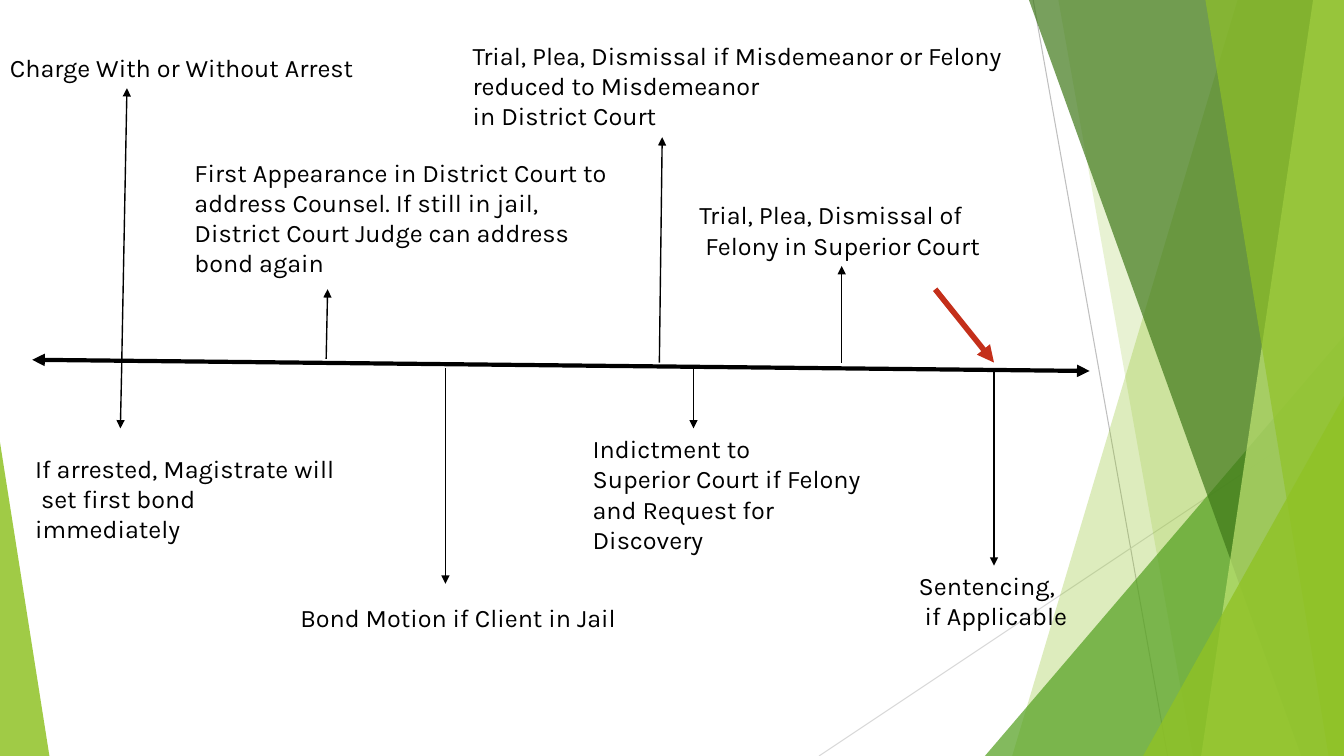
import pptx
import pptx.util
import pptx.dml.color
import pptx.enum.shapes
import pptx.oxml
import pptx.oxml.ns

Pt = pptx.util.Pt
RGB = pptx.dml.color.RGBColor
KIND = pptx.enum.shapes.MSO_SHAPE
LINK = pptx.enum.shapes.MSO_CONNECTOR

BLACK = RGB(0x00, 0x00, 0x00)
RED = RGB(0xC4, 0x2F, 0x1A)
GREY = RGB(0xBF, 0xBF, 0xBF)
PALE = RGB(0xD9, 0xD9, 0xD9)
LIME = RGB(0x90, 0xC2, 0x26)
LEAF = RGB(0x54, 0xA0, 0x21)
PINE = RGB(0x3F, 0x78, 0x19)
MINT = RGB(0xC0, 0xE4, 0x74)
WIDE, HIGH = 960, 540


def sub(parent, tag, **attrs):
    """Append a DrawingML element with the given attributes."""
    node = pptx.oxml.parse_xml(f"<a:{tag} {pptx.oxml.ns.nsdecls('a')}/>")
    for name, value in attrs.items():
        node.set(name, value)
    parent.append(node)


class Board:
    font = "Karla"
    size = 18

    def __init__(self, slide):
        self.shapes = slide.shapes

    def tint(self, shape, color, alpha):
        """Fill a shape with a colour at alpha percent opacity."""
        shape.shadow.inherit = False
        shape.line.fill.background()
        shape.fill.solid()
        shape.fill.fore_color.rgb = color
        fill = shape.fill._xPr.find(pptx.oxml.ns.qn("a:solidFill"))
        sub(fill[0], "alpha", val=str(alpha * 1000))

    def band(self, points, color, alpha):
        start, *rest = [(Pt(x), Pt(y)) for x, y in points]
        form = self.shapes.build_freeform(*start, scale=1.0)
        form.add_line_segments(rest, close=True)
        self.tint(form.convert_to_shape(), color, alpha)

    def wedge(self, left, top, width, apex, color, alpha):
        """Triangle standing on the slide's bottom edge."""
        shape = self.shapes.add_shape(KIND.ISOSCELES_TRIANGLE, Pt(left), Pt(top),
                                      Pt(width), Pt(HIGH - top))
        shape.adjustments[0] = apex
        self.tint(shape, color, alpha)

    def line(self, start, end, color=BLACK, width=1, head=False, tail=True, join=None):
        """Straight line; join is a (box, side) pair for its end."""
        link = self.shapes.add_connector(LINK.STRAIGHT, *map(Pt, start + end))
        link.line.color.rgb = color
        link.line.width = Pt(width)
        if join:
            link.end_connect(*join)
        for tag, shown in (("headEnd", head), ("tailEnd", tail)):
            if shown:
                sub(link.line._ln, tag, type="triangle")
        sub(link._element.spPr, "effectLst")

    def text(self, text, left, top, width, color=BLACK):
        rows = text.split("\n")
        box = self.shapes.add_textbox(Pt(left), Pt(top), Pt(width),
                                      Pt(7.4 + 21.8 * len(rows)))
        frame = box.text_frame
        frame.word_wrap = True
        for index, row in enumerate(rows):
            para = frame.add_paragraph() if index else frame.paragraphs[0]
            run = para.add_run()
            run.text = row
            run.font.name = self.font
            run.font.size = Pt(self.size)
            run.font.color.rgb = color
        return box


def decor(board):
    board.line((738, 0), (834, HIGH), color=GREY, width=0.75, tail=False)
    board.line((WIDE, 290), (585, HIGH), color=PALE, width=0.75, tail=False)

    def side(top, foot, color, alpha):
        """Band from the given top and foot to the right edge."""
        board.band([(top, 0), (WIDE, 0), (WIDE, HIGH), (foot, HIGH)], color, alpha)

    side(884, 723, LIME, 30)
    side(756, 852, LIME, 20)
    board.wedge(703.5, 240, 256.5, 1, LEAF, 72)
    side(735, 929.5, PINE, 70)
    side(938, 858, MINT, 70)
    side(861, 949, LIME, 65)
    board.wedge(816.5, 283, 143.5, 1, LIME, 80)
    board.wedge(0, 316, 35.3, 0, LIME, 85)


def course(board):
    """Timeline of a criminal case with its labels and arrows."""
    board.line((23, 257), (778.3, 265), width=3, head=True)
    board.text("Charge With or Without Arrest", 0, 33.8, 270)
    board.text("First Appearance in District Court to\naddress Counsel. If still in jail,\n"
               "District Court Judge can address\nbond again", 131.8, 108.5, 312)
    board.text("Bond Motion if Client in Jail", 207.4, 426.4, 246)
    board.text("If arrested, Magistrate will\n set first bond\nimmediately", 18, 320, 236)
    board.text("Trial, Plea, Dismissal if Misdemeanor or Felony\n"
               "reduced to Misdemeanor\nin District Court", 330.5, 25, 400)
    board.text("Indictment to\nSuperior Court if Felony\nand Request for\nDiscovery",
               416.2, 306, 226)
    felony = board.text("Trial, Plea, Dismissal of\n Felony in Superior Court",
                        492.5, 139, 217.4)
    verdict = board.text("Sentencing,\n if Applicable", 649.2, 404, 121.6)

    for start, end, join in [
        ((87, 257), (90.7, 63), None),
        ((87, 259), (86, 306), None),
        ((233, 256.3), (234, 206.6), None),
        ((318.2, 263), (318.2, 417), None),
        ((471, 259), (473, 98), None),
        ((495.4, 263), (495.4, 306), None),
        ((601.2, 259), (601.2, 190), (felony, 2)),
        ((710, 264), (710, 404), (verdict, 0)),
    ]:
        board.line(start, end, join=join)
    board.line((668, 206.6), (710, 259), color=RED, width=4)


def main():
    deck = pptx.Presentation()
    deck.slide_width, deck.slide_height = Pt(WIDE), Pt(HIGH)
    board = Board(deck.slides.add_slide(deck.slide_layouts[6]))
    decor(board)
    course(board)
    deck.save("out.pptx")


if __name__ == "__main__":
    main()
